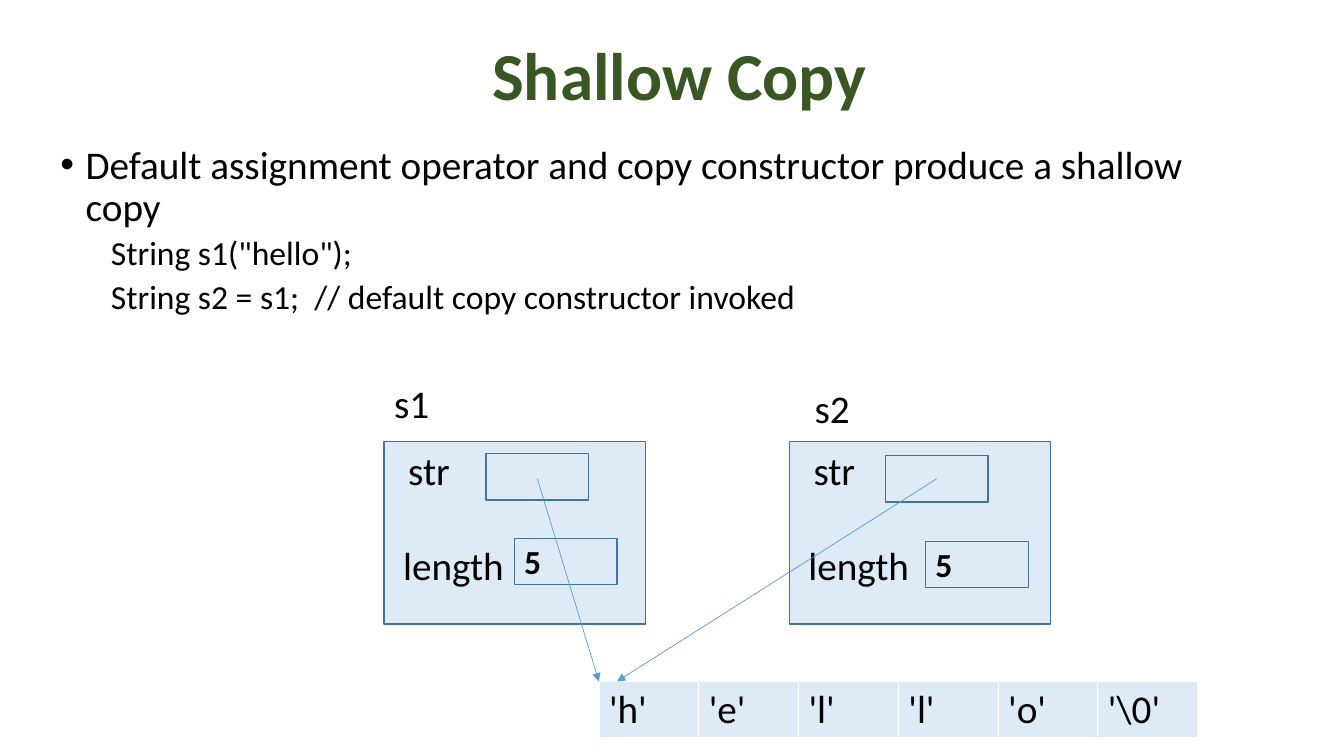
"""Build a slide that shows how a shallow copy shares one character array."""
from lxml import etree
from pptx import Presentation
from pptx.dml.color import RGBColor
from pptx.enum import shapes, text
from pptx.oxml.ns import qn
from pptx.util import Inches, Pt

TITLE = "Shallow Copy"
BODY = [
    ("Default assignment operator and copy constructor produce a shallow copy", 0),
    ('String s1("hello");', 1),
    ("String s2 = s1;  // default copy constructor invoked", 1),
]
LEVELS = [
    dict(size=28, before=10, margin=0.25, indent=-0.25),
    dict(size=24, before=5, margin=0.5, indent=0),
]
OBJECTS = [
    dict(name="s1", left=3.81, label=(3.81, 3.71, 1.09), pointer=(4.82, 4.5),
         length=(5.1, 5.34), target=5.94),
    dict(name="s2", left=7.83, label=(7.98, 3.76, 1.15), pointer=(8.78, 4.52),
         length=(9.18, 5.37), target=6.12),
]
FIELDS = [("str", 0.14, 0), ("length", 0.09, 34)]
LENGTH = "5"
CHARACTERS = ["'h'", "'e'", "'l'", "'l'", "'o'", "'\\0'"]
OBJECT_TOP, OBJECT_WIDTH, OBJECT_HEIGHT = 4.38, 2.59, 1.81
FIELD_WIDTH, FIELD_HEIGHT = 1.02, 0.46
ARROW_TOP = 4.75
ARRAY_LEFT, ARRAY_TOP, CELL_WIDTH, CELL_HEIGHT = 5.94, 6.76, 0.99, 0.57
BORDERS = [("a:lnL", 1), ("a:lnR", 1), ("a:lnT", 1), ("a:lnB", 3)]
BLACK, WHITE, GREEN = "000000", "FFFFFF", "385723"
PALE, OUTLINE, ARROW = "DEEBF7", "43739E", "5B9BD5"


def color(value):
    return RGBColor.from_string(value)


def style(paragraph, size, bold=False, shade=BLACK):
    font = paragraph.font
    font.name, font.size, font.bold = "Calibri", Pt(size), bold
    font.color.rgb = color(shade)


def set_indent(paragraph, margin, indent=0):
    properties = paragraph._p.get_or_add_pPr()
    properties.set("marL", str(Inches(margin)))
    properties.set("indent", str(Inches(indent)))
    return properties


def place(shape, left, top, width, height):
    shape.left, shape.top = Inches(left), Inches(top)
    shape.width, shape.height = Inches(width), Inches(height)


def fill_placeholders(slide):
    title, body = slide.placeholders
    place(title, 1.07, 0.18, 11.34, 1.2)
    place(body, 0.5, 1.39, 11.92, 5.37)
    for shape in (title, body):
        shape.text_frame.auto_size = text.MSO_AUTO_SIZE.NONE
    title.text_frame.text = TITLE
    heading = title.text_frame.paragraphs[0]
    heading.alignment, heading.line_spacing = text.PP_ALIGN.CENTER, 0.9
    style(heading, 48, True, GREEN)
    body.text_frame.text = "\n".join(line for line, _ in BODY)
    for paragraph, (_, level) in zip(body.text_frame.paragraphs, BODY):
        look = LEVELS[level]
        paragraph.level = level
        paragraph.line_spacing = 0.9
        paragraph.space_before = Pt(look["before"])
        properties = set_indent(paragraph, look["margin"], look["indent"])
        if level:
            etree.SubElement(properties, qn("a:buNone"))
        style(paragraph, look["size"])


def add_box(slide, left, top, width, height):
    box = slide.shapes.add_shape(shapes.MSO_SHAPE.RECTANGLE, Inches(left), Inches(top),
                                 Inches(width), Inches(height))
    box.shadow.inherit = False
    box.fill.solid()
    box.fill.fore_color.rgb = color(PALE)
    box.line.color.rgb = color(OUTLINE)
    box.line.width = Pt(1)
    return box


def add_object(slide, item):
    frame = add_box(slide, item["left"], OBJECT_TOP, OBJECT_WIDTH, OBJECT_HEIGHT).text_frame
    frame.vertical_anchor = text.MSO_ANCHOR.TOP
    frame.text = "\n".join(field for field, _, _ in FIELDS)
    for paragraph, (_, margin, before) in zip(frame.paragraphs, FIELDS):
        paragraph.alignment = text.PP_ALIGN.LEFT
        paragraph.space_before = Pt(before)
        set_indent(paragraph, margin)
        style(paragraph, 28)
    add_box(slide, *item["pointer"], FIELD_WIDTH, FIELD_HEIGHT)
    length = add_box(slide, *item["length"], FIELD_WIDTH, FIELD_HEIGHT)
    length.text_frame.text = LENGTH
    style(length.text_frame.paragraphs[0], 24, True)

    left, top, width = item["label"]
    label = slide.shapes.add_textbox(Inches(left), Inches(top), Inches(width), Inches(0.57))
    label.text_frame.word_wrap = True
    label.text_frame.text = item["name"]
    style(label.text_frame.paragraphs[0], 28)


def add_array(slide):
    table = slide.shapes.add_table(1, len(CHARACTERS), Inches(ARRAY_LEFT), Inches(ARRAY_TOP),
                                   Inches(CELL_WIDTH * len(CHARACTERS)),
                                   Inches(CELL_HEIGHT)).table
    table.first_row = table.horz_banding = False
    for cell, character in zip(table.iter_cells(), CHARACTERS):
        cell.text = character
        cell.vertical_anchor = text.MSO_ANCHOR.MIDDLE
        style(cell.text_frame.paragraphs[0], 28)
        properties = cell._tc.get_or_add_tcPr()
        for tag, width in BORDERS:
            border = etree.SubElement(properties, qn(tag), w=str(Pt(width)))
            solid = etree.SubElement(border, qn("a:solidFill"))
            etree.SubElement(solid, qn("a:srgbClr"), val=WHITE)
        cell.fill.solid()
        cell.fill.fore_color.rgb = color(PALE)


def add_arrow(slide, item):
    start = item["pointer"][0] + FIELD_WIDTH / 2
    arrow = slide.shapes.add_connector(shapes.MSO_CONNECTOR.STRAIGHT, Inches(start),
                                       Inches(ARROW_TOP), Inches(item["target"]),
                                       Inches(ARRAY_TOP))
    arrow.line.color.rgb = color(ARROW)
    arrow.line.width = Pt(0.5)
    etree.SubElement(arrow.line._get_or_add_ln(), qn("a:tailEnd"), type="triangle")
    etree.SubElement(arrow._element.spPr, qn("a:effectLst"))


def main():
    presentation = Presentation()
    presentation.slide_width, presentation.slide_height = Inches(13.33), Inches(7.5)
    slide = presentation.slides.add_slide(presentation.slide_layouts[1])
    fill_placeholders(slide)
    for item in OBJECTS:
        add_object(slide, item)
    add_array(slide)
    for item in OBJECTS:
        add_arrow(slide, item)
    presentation.save("out.pptx")


if __name__ == "__main__":
    main()
